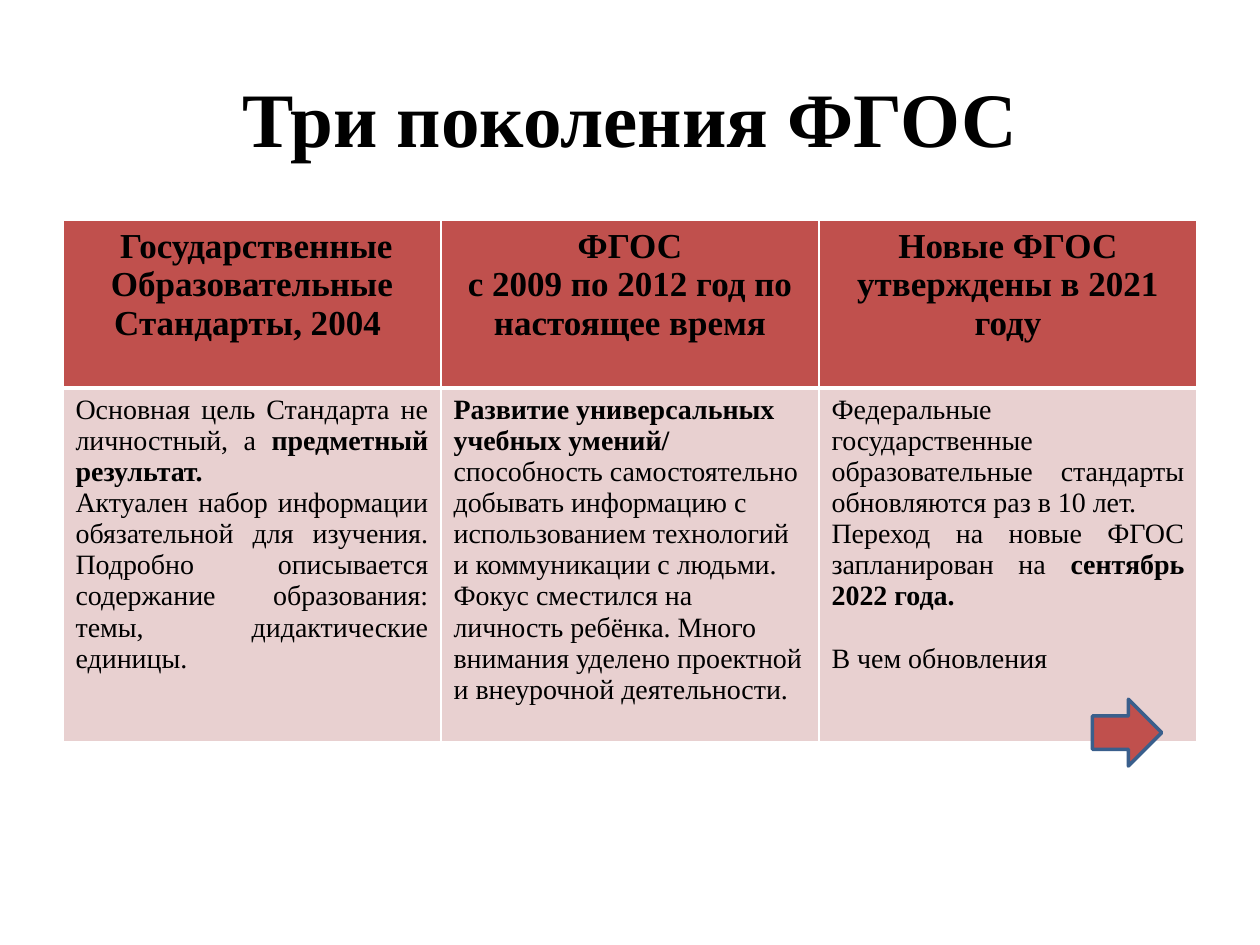
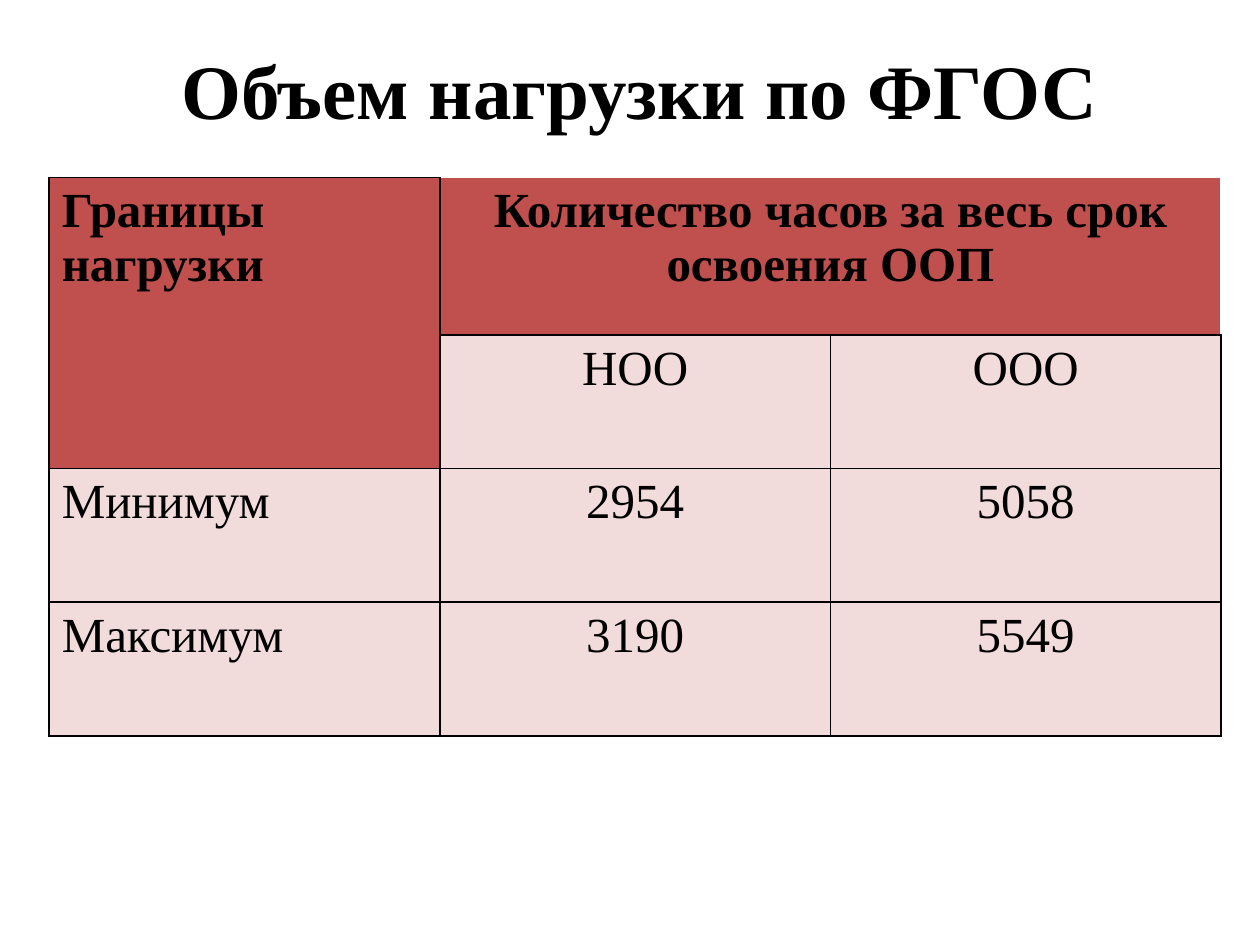
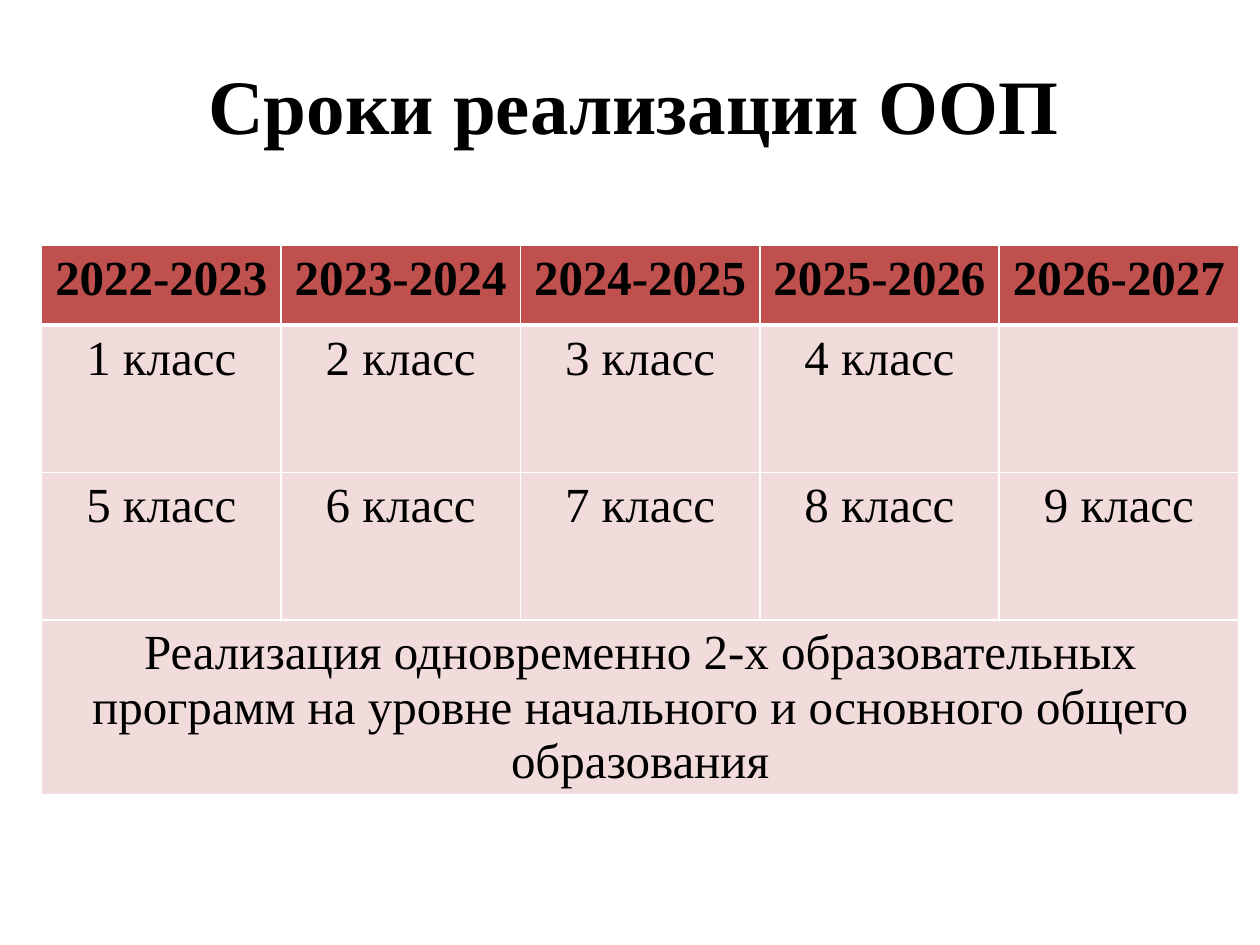
from lxml.etree import SubElement
from pptx import Presentation
from pptx.dml.color import RGBColor
from pptx.enum.shapes import MSO_SHAPE
from pptx.enum.text import MSO_ANCHOR, PP_ALIGN
from pptx.oxml.ns import qn
from pptx.util import Inches, Pt

BLACK = RGBColor(0x00, 0x00, 0x00)
WHITE = RGBColor(0xFF, 0xFF, 0xFF)
RED = RGBColor(0xC0, 0x50, 0x4D)
DUSTY_PINK = RGBColor(0xE8, 0xD0, 0xD0)
PALE_PINK = RGBColor(0xF2, 0xDC, 0xDB)
BLUE = RGBColor(0x3A, 0x5F, 0x8C)
LEFT, CENTER, JUSTIFY = PP_ALIGN.LEFT, PP_ALIGN.CENTER, PP_ALIGN.JUSTIFY

FONT = "Times New Roman"
GRID_COLUMNS, GRID_ROWS = 100, 75
SIDES = ("L", "R", "T", "B")


class Deck:
    """Holds the shared style and the current slide; lengths are grid units."""

    def __init__(self):
        self.presentation = Presentation()
        self.presentation.slide_width = Inches(10)
        self.presentation.slide_height = Inches(7.5)
        self.column = self.presentation.slide_width / GRID_COLUMNS
        self.row = self.presentation.slide_height / GRID_ROWS
        self.slide = None

    def box(self, left, top, width, height):
        return (round(left * self.column), round(top * self.row),
                round(width * self.column), round(height * self.row))

    def add_slide(self, title, *area):
        layout = self.presentation.slide_layouts.get_by_name("Title Only")
        self.slide = self.presentation.slides.add_slide(layout)
        shape = self.slide.shapes.title
        shape.left, shape.top, shape.width, shape.height = self.box(*area)
        shape.text_frame.vertical_anchor = MSO_ANCHOR.MIDDLE
        self.add_text(shape.text_frame, title, 44, CENTER, bold=True)

    def add_text(self, frame, text, size, alignment, bold=False):
        """Add one paragraph per line; asterisks switch bold on and off."""
        for number, line in enumerate(text.split("\n")):
            paragraph = frame.add_paragraph() if number else frame.paragraphs[0]
            paragraph.alignment = alignment
            for position, part in enumerate(line.split("*")):
                if part:
                    run = paragraph.add_run()
                    run.text = part
                    run.font.name = FONT
                    run.font.size = Pt(size)
                    run.font.bold = bold or position % 2 == 1
                    run.font.color.rgb = BLACK

    def border(self, cell, color, **widths):
        """Draw the cell's sides in one colour; widths are points by side."""
        properties = cell._tc.get_or_add_tcPr()
        for side in SIDES:
            if side in widths:
                old_line = properties.find(qn(f"a:ln{side}"))
                if old_line is not None:
                    properties.remove(old_line)
                line = SubElement(properties, qn(f"a:ln{side}"), w=str(Pt(widths[side])))
                fill = SubElement(line, qn("a:solidFill"))
                SubElement(fill, qn("a:srgbClr"), val=str(color))
        lines = [properties.find(qn(f"a:ln{side}")) for side in SIDES]
        for position, line in enumerate(line for line in lines if line is not None):
            properties.insert(position, line)

    def add_table(self, left, top, width, heights, rows, alignments,
                  header_alignments, sizes, body_fill, line_color,
                  header_rule=1, merges=()):
        column_count = len(rows[0])
        table = self.slide.shapes.add_table(
            len(rows), column_count, *self.box(left, top, width, sum(heights))).table
        table.first_row = table.horz_banding = False
        for column in table.columns:
            column.width = round(width * self.column / column_count)
        for number, (height, texts) in enumerate(zip(heights, rows)):
            table.rows[number].height = round(height * self.row)
            header = number == 0
            for position, text in enumerate(texts):
                cell = table.cell(number, position)
                self.border(cell, line_color, L=1, R=1, T=header_rule if number == 1 else 1,
                            B=header_rule if header else 1)
                cell.fill.solid()
                cell.fill.fore_color.rgb = RED if header else body_fill
                alignment = (header_alignments if header else alignments)[position]
                self.add_text(cell.text_frame, text, sizes[0 if header else 1],
                              alignment, bold=header)
        for first, last in merges:
            table.cell(*first).merge(table.cell(*last))
        return table

    def add_arrow(self, *area):
        shape = self.slide.shapes.add_shape(MSO_SHAPE.RIGHT_ARROW, *self.box(*area))
        shape.shadow.inherit = False
        shape.fill.solid()
        shape.fill.fore_color.rgb = RED
        shape.line.color.rgb = BLUE
        shape.line.width = Pt(2)


def add_generations(deck):
    deck.add_slide("Три поколения ФГОС", 5, 3, 90, 12.5)
    rows = [
        (" Государственные\nОбразовательные\nСтандарты, 2004 ",
         "ФГОС\nс 2009 по 2012 год по настоящее время",
         "Новые ФГОС утверждены в 2021 году"),
        ("Основная цель Стандарта не личностный, а *предметный результат. *\n"
         "Актуален набор информации обязательной для изучения. Подробно "
         "описывается содержание образования: темы, дидактические единицы.",
         "*Развитие универсальных учебных умений/ *способность самостоятельно "
         "добывать информацию с использованием технологий и коммуникации с людьми. "
         "Фокус сместился на личность ребёнка. Много внимания уделено проектной "
         "и внеурочной деятельности.",
         "Федеральные государственные образовательные стандарты обновляются "
         "раз в 10 лет.\nПереход на новые ФГОС запланирован на "
         "*сентябрь 2022 года. *\nВ чем обновления"),
    ]
    table = deck.add_table(5, 17.5, 90, (13.3, 28.1), rows, (JUSTIFY, LEFT, JUSTIFY),
                           [CENTER] * 3, (20, 16), DUSTY_PINK, WHITE, header_rule=3)
    closing_question = table.cell(1, 2).text_frame.paragraphs[-1]
    closing_question.alignment = LEFT
    closing_question.space_before = Pt(18)
    deck.add_arrow(86.7, 55.5, 5.5, 5.3)


def add_workload(deck):
    deck.add_slide("Объем нагрузки по ФГОС", 3.3, 2.3, 95, 9.4)
    rows = [
        ("Границы нагрузки", "Количество часов за весь срок освоения ООП", ""),
        ("", "НОО", "ООО"),
        ("Минимум", "2954", "5058"),
        ("Максимум", "3190", "5549"),
    ]
    alignments = (LEFT, CENTER, CENTER)
    table = deck.add_table(3.9, 14.1, 93, (12.5, 10.6, 10.6, 10.6), rows, alignments,
                           alignments, (28, 28), PALE_PINK, BLACK,
                           merges=[((0, 0), (1, 0)), ((0, 1), (0, 2))])
    for position in (1, 2):
        deck.border(table.cell(0, position), WHITE, T=1, R=1)


def add_schedule(deck):
    deck.add_slide("Сроки реализации ООП", 2.3, 2.3, 96, 11.8)
    years = range(2022, 2027)
    rows = [
        [f"{year}-{year + 1}" for year in years],
        [f"{grade} класс" for grade in range(1, 5)] + [""],
        [f"{grade} класс" for grade in range(5, 10)],
        ["Реализация одновременно 2-х образовательных программ на уровне "
         "начального и основного общего образования"] + [""] * 4,
    ]
    centered = [CENTER] * len(years)
    deck.add_table(3.3, 19.5, 95, (6.3, 11.7, 11.7, 13.9), rows, centered, centered,
                   (28, 28), PALE_PINK, WHITE, header_rule=3, merges=[((3, 0), (3, 4))])


def main():
    deck = Deck()
    add_generations(deck)
    add_workload(deck)
    add_schedule(deck)
    deck.presentation.save("out.pptx")


if __name__ == "__main__":
    main()
